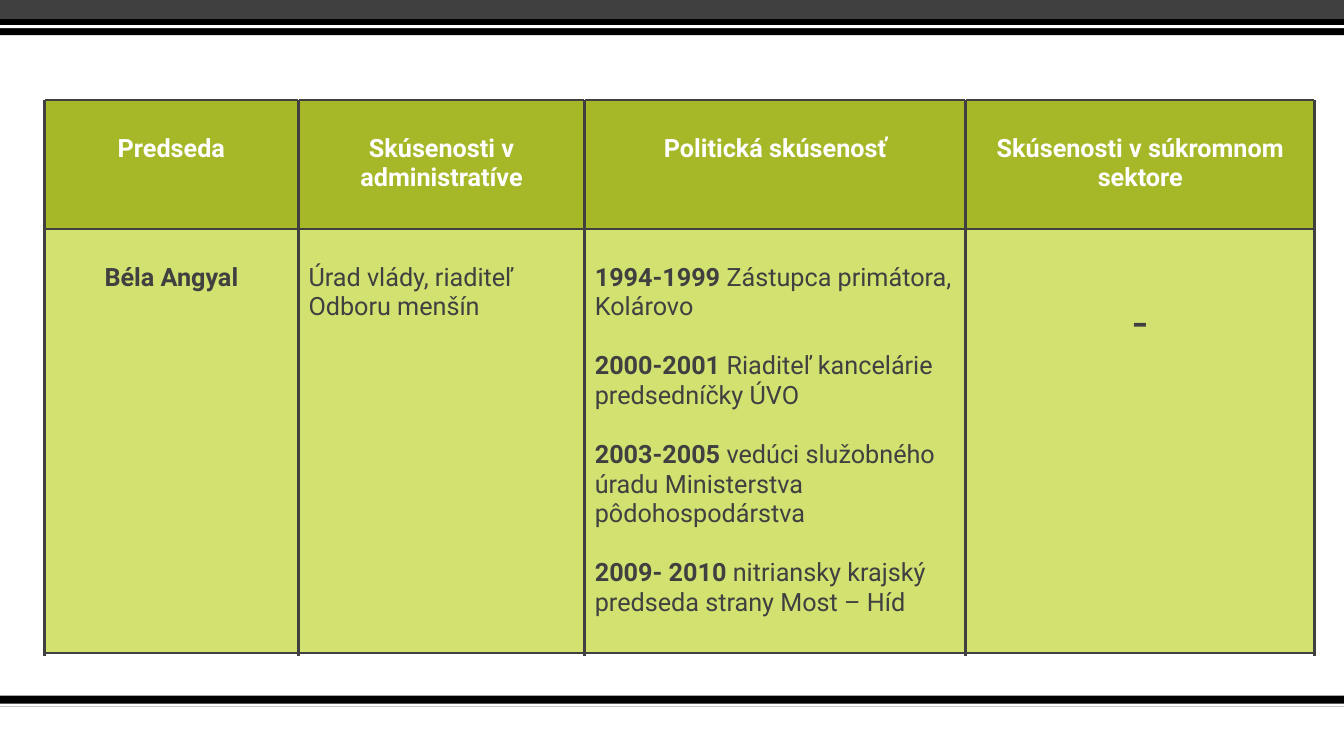
from dataclasses import dataclass
from itertools import accumulate

from lxml.etree import SubElement
from pptx import Presentation
from pptx.dml.color import RGBColor
from pptx.enum.shapes import MSO_CONNECTOR, MSO_SHAPE
from pptx.enum.text import PP_ALIGN
from pptx.oxml import parse_xml
from pptx.oxml.ns import nsdecls, qn
from pptx.util import Inches, Pt

DARK, BLACK, WHITE = "404040", "000000", "FFFFFF"
OLIVE, LIME = "A6B727", "D3E171"
TABLE_LEFT, TABLE_TOP = 0.44, 0.99
COLUMN_WIDTHS = [2.52, 2.84, 3.78, 3.46]
ROW_HEIGHTS = [1.28, 4.21]
RULE_BOTTOM = 6.51


@dataclass
class Band:
    top: float
    height: float
    color: str


@dataclass
class Entry:
    """A cell; each paragraph is a (bold part, regular part) pair."""
    paragraphs: list[tuple[str, str]]
    fill: str = LIME
    color: str = DARK
    size: int = 18
    align: PP_ALIGN = PP_ALIGN.LEFT
    margin_top: float = 0.34


def heading(text: str) -> Entry:
    return Entry([(text, "")], OLIVE, WHITE, align=PP_ALIGN.CENTER)


BANDS = [
    Band(6.9, 0.11, BLACK),
    Band(6.98, 0.03, WHITE),
    Band(0, 0.19, DARK),
    Band(0.19, 0.16, BLACK),
    Band(0.25, 0.03, WHITE),
]
ROWS = [
    [
        heading("Predseda"),
        heading("Skúsenosti v administratíve"),
        heading("Politická skúsenosť"),
        heading("Skúsenosti v súkromnom sektore"),
    ],
    [
        Entry([("Béla Angyal", "")], align=PP_ALIGN.CENTER),
        Entry([("", "Úrad vlády, riaditeľ Odboru menšín")]),
        Entry([
            ("1994-1999", " Zástupca primátora, Kolárovo"),
            ("2000-2001", " Riaditeľ kancelárie predsedníčky ÚVO"),
            ("2003-2005", " vedúci služobného úradu Ministerstva pôdohospodárstva"),
            ("2009- 2010 ", "nitriansky krajský predseda strany Most – Híd"),
        ]),
        Entry([("", "-")], size=36, align=PP_ALIGN.CENTER, margin_top=0.64),
    ],
]


def rgb(color: str) -> RGBColor:
    return RGBColor.from_string(color)


def apply_format(target, values: dict) -> None:
    for name, value in values.items():
        setattr(target, name, value)


def draw_band(slide, band: Band, width: int) -> None:
    shape = slide.shapes.add_shape(
        MSO_SHAPE.RECTANGLE, 0, Inches(band.top), width, Inches(band.height))
    shape.shadow.inherit = False
    shape.fill.solid()
    shape.fill.fore_color.rgb = rgb(band.color)
    shape.line.fill.background()


def add_cell_borders(cell) -> None:
    properties = cell._tc.get_or_add_tcPr()
    for side in ("lnB", "lnT"):
        properties.insert(0, parse_xml(
            f'<a:{side} {nsdecls("a")} w="{Pt(2)}"><a:solidFill>'
            f'<a:srgbClr val="{DARK}"/></a:solidFill></a:{side}>'))


def fill_cell(cell, entry: Entry) -> None:
    cell.fill.solid()
    cell.fill.fore_color.rgb = rgb(entry.fill)
    cell.margin_top = Inches(entry.margin_top)
    add_cell_borders(cell)
    frame = cell.text_frame
    for index, parts in enumerate(entry.paragraphs):
        paragraph = frame.add_paragraph() if index else frame.paragraphs[0]
        apply_format(paragraph, {
            "alignment": entry.align, "space_before": Pt(21 if index else 0)})
        for text, bold in zip(parts, (True, False)):
            if text:
                run = paragraph.add_run()
                run.text = text
                apply_format(run.font, {
                    "name": "Roboto", "size": Pt(entry.size), "bold": bold})
                run.font.color.rgb = rgb(entry.color)


def draw_table(slide) -> None:
    table = slide.shapes.add_table(
        len(ROWS), len(COLUMN_WIDTHS), Inches(TABLE_LEFT), Inches(TABLE_TOP),
        Inches(sum(COLUMN_WIDTHS)), Inches(sum(ROW_HEIGHTS))).table
    apply_format(table, {"first_row": False, "horz_banding": False})
    for column, width in zip(table.columns, COLUMN_WIDTHS):
        column.width = Inches(width)
    for row, height, entries in zip(table.rows, ROW_HEIGHTS, ROWS):
        row.height = Inches(height)
        for cell, entry in zip(row.cells, entries):
            fill_cell(cell, entry)


def draw_column_rule(slide, left: float) -> None:
    rule = slide.shapes.add_connector(
        MSO_CONNECTOR.STRAIGHT, Inches(left), Inches(TABLE_TOP),
        Inches(left), Inches(RULE_BOTTOM))
    rule.line.width = Pt(2.25)
    rule.line.color.rgb = rgb(DARK)
    SubElement(rule._element.spPr, qn("a:effectLst"))


def main() -> None:
    presentation = Presentation()
    apply_format(presentation, {
        "slide_width": Inches(13.33), "slide_height": Inches(7.5)})
    slide = presentation.slides.add_slide(presentation.slide_layouts[6])

    # Bands at the top and bottom edges
    for band in BANDS:
        draw_band(slide, band, presentation.slide_width)

    # Table and the vertical rules on its column edges
    draw_table(slide)
    for left in accumulate(COLUMN_WIDTHS, initial=TABLE_LEFT):
        draw_column_rule(slide, left)

    presentation.save("out.pptx")


if __name__ == "__main__":
    main()
